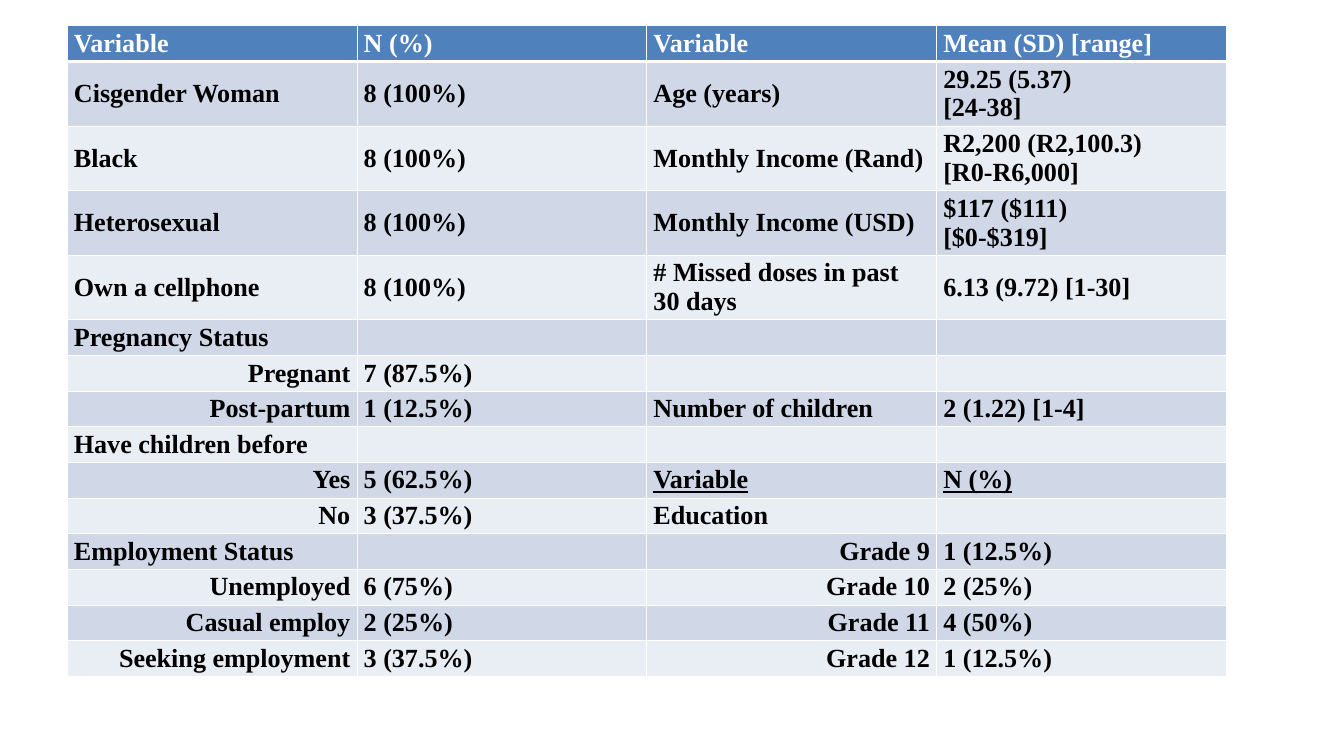
from dataclasses import dataclass

from lxml import etree
from pptx import Presentation
from pptx.dml.color import RGBColor
from pptx.enum.text import MSO_ANCHOR as Anchor, PP_ALIGN as Align
from pptx.oxml.ns import qn
from pptx.util import Pt

FONT, SIZE = "Times New Roman", 28
WHITE, BLACK = "FFFFFF", "000000"
HEADER_FILL = "4F81BD"
BAND_FILLS = ("D0D8E8", "E9EDF4")
COL_WIDTH, ROW_HEIGHT = 310.5, 29.5
THIN, THICK = 1, 3


@dataclass(frozen=True)
class Entry:
    text: str = ""
    align: Align = Align.LEFT
    underline: bool = False


def sub(text: str) -> Entry:
    """A category listed under a variable."""
    return Entry(text, align=Align.RIGHT)


def head(text: str) -> Entry:
    """A heading inside the table body."""
    return Entry(text, underline=True)


ROWS = [
    ("Variable", "N (%)", "Variable", "Mean (SD) [range]"),
    ("Cisgender Woman", "8 (100%)", "Age (years)", "29.25 (5.37)\n[24-38]"),
    ("Black", "8 (100%)", "Monthly Income (Rand)", "R2,200 (R2,100.3)\n[R0-R6,000]"),
    ("Heterosexual", "8 (100%)", "Monthly Income (USD)", "$117 ($111)\n[$0-$319]"),
    ("Own a cellphone", "8 (100%)", "# Missed doses in past 30 days", "6.13 (9.72) [1-30]"),
    ("Pregnancy Status", "", "", ""),
    (sub("Pregnant"), "7 (87.5%)", "", ""),
    (sub("Post-partum"), "1 (12.5%)", "Number of children", "2 (1.22) [1-4]"),
    ("Have children before", "", "", ""),
    (sub("Yes"), "5 (62.5%)", head("Variable"), head("N (%)")),
    (sub("No"), "3 (37.5%)", "Education", ""),
    ("Employment Status", "", sub("Grade 9"), "1 (12.5%)"),
    (sub("Unemployed"), "6 (75%)", sub("Grade 10"), "2 (25%)"),
    (sub("Casual employ"), "2 (25%)", sub("Grade 11"), "4 (50%)"),
    (sub("Seeking employment"), "3 (37.5%)", sub("Grade 12"), "1 (12.5%)"),
]


def rgb(value: str) -> RGBColor:
    return RGBColor.from_string(value)


def set_borders(cell, top: float, bottom: float) -> None:
    tc_pr = cell._tc.get_or_add_tcPr()
    widths = {"lnL": THIN, "lnR": THIN, "lnT": top, "lnB": bottom}
    for i, (side, width) in enumerate(widths.items()):
        ln = etree.Element(qn(f"a:{side}"), w=str(Pt(width)))
        fill = etree.SubElement(ln, qn("a:solidFill"))
        etree.SubElement(fill, qn("a:srgbClr"), val=WHITE)
        tc_pr.insert(i, ln)


def fill_cell(cell, entry: Entry, fill: str, color: str) -> None:
    cell.fill.solid()
    cell.fill.fore_color.rgb = rgb(fill)
    cell.vertical_anchor = Anchor.MIDDLE
    cell.text = entry.text
    for p in cell.text_frame.paragraphs:
        p.alignment = entry.align
        p.font.name, p.font.size, p.font.bold = FONT, Pt(SIZE), True
        p.font.color.rgb = rgb(color)
        if entry.underline:
            p.font.underline = True


def add_summary_table(s) -> None:
    cols = len(ROWS[0])
    frame = s.shapes.add_table(len(ROWS), cols, Pt(72), Pt(27.5),
                               Pt(COL_WIDTH * cols), Pt(ROW_HEIGHT * len(ROWS)))
    table = frame.table
    for col in table.columns:
        col.width = Pt(COL_WIDTH)
    for r, values in enumerate(ROWS):
        # Minimum height: rows grow to fit their text
        table.rows[r].height = Pt(ROW_HEIGHT)
        fill = BAND_FILLS[(r - 1) % 2] if r else HEADER_FILL
        for c, value in enumerate(values):
            entry = value if isinstance(value, Entry) else Entry(value)
            cell = table.cell(r, c)
            fill_cell(cell, entry, fill, BLACK if r else WHITE)
            set_borders(cell, top=THICK if r == 1 else THIN,
                        bottom=THICK if r == 0 else THIN)
    frame.height = Pt(746.6)


def main() -> None:
    prs = Presentation()
    prs.slide_width, prs.slide_height = Pt(1440), Pt(810)
    s = prs.slides.add_slide(prs.slide_layouts[6])

    # Participant characteristics
    add_summary_table(s)
    prs.save("out.pptx")


if __name__ == "__main__":
    main()
